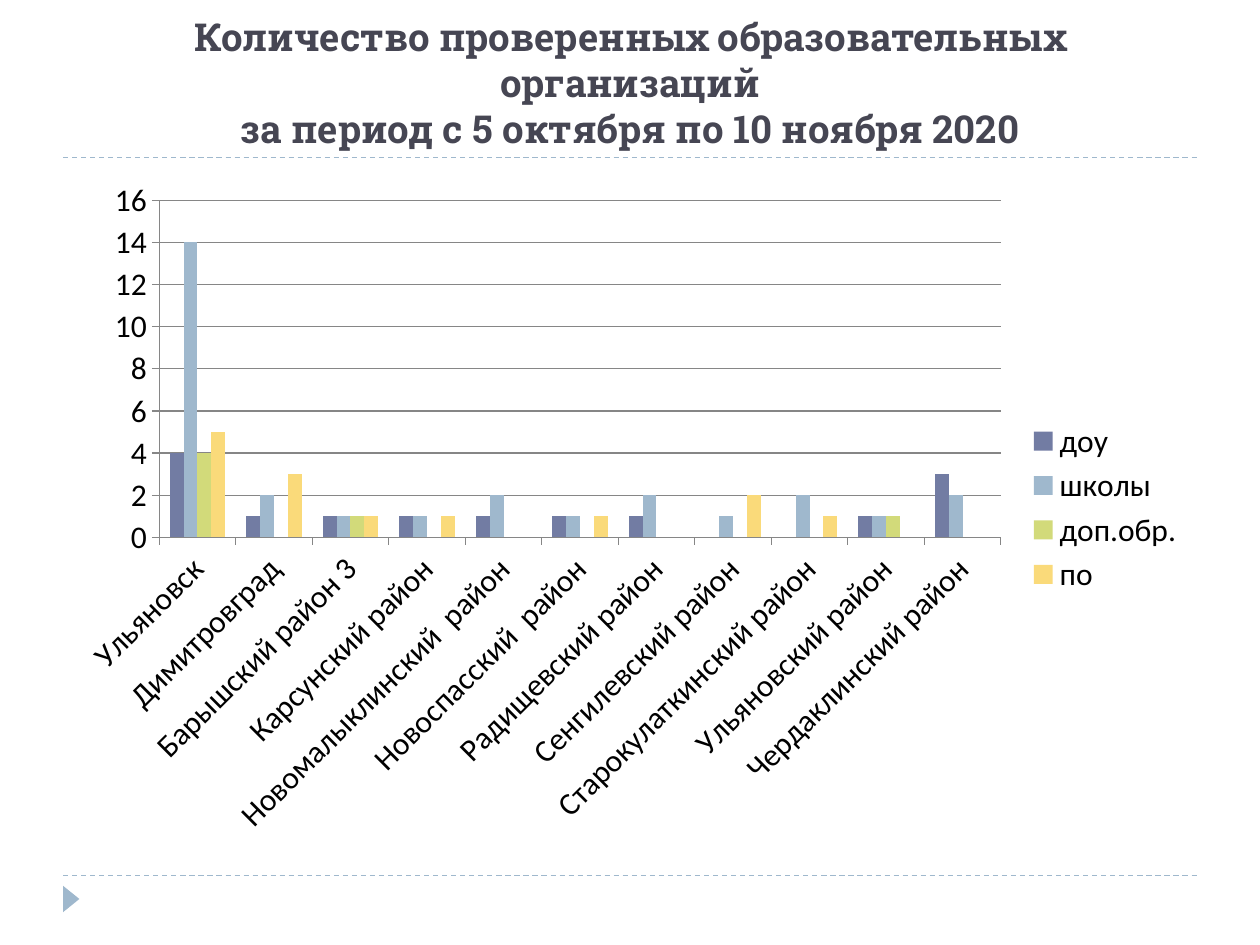
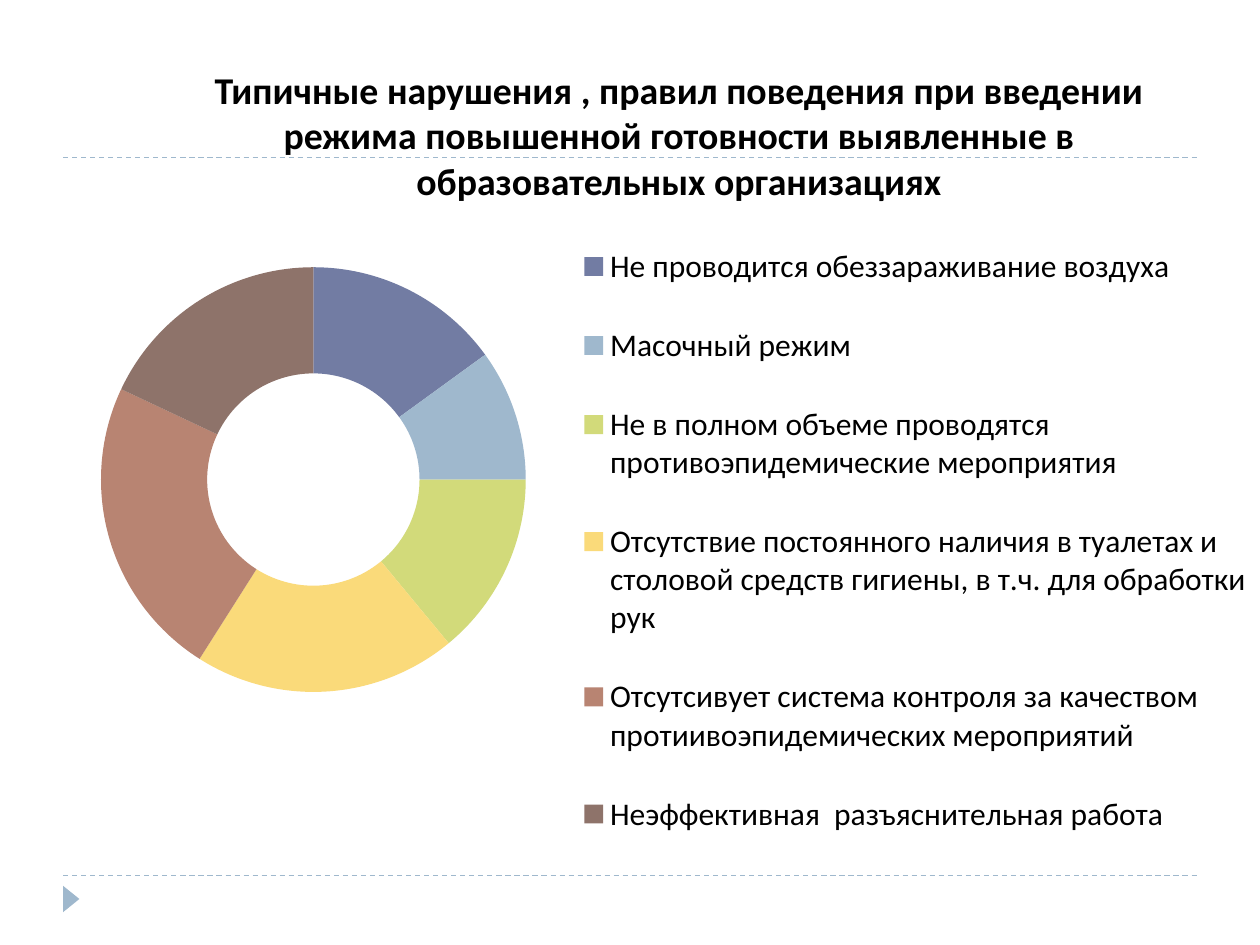
"""Build two slides on school inspections: a column chart and a doughnut chart."""
from lxml.etree import SubElement
from pptx import Presentation
from pptx.chart.data import CategoryChartData
from pptx.dml.color import RGBColor
from pptx.enum.chart import XL_CHART_TYPE, XL_LEGEND_POSITION, XL_TICK_MARK
from pptx.enum.dml import MSO_LINE
from pptx.enum.shapes import MSO_CONNECTOR, MSO_SHAPE
from pptx.enum.text import MSO_ANCHOR, PP_ALIGN
from pptx.oxml import parse_xml
from pptx.oxml.ns import nsdecls, qn
from pptx.util import Inches, Pt

INK, TITLE_INK, AXIS, ACCENT = "000000", "464653", "868686", "9FB8CD"
PALETTE = ["727CA3", ACCENT, "D2DA7A", "FADA7A", "B88472", "8E736A"]
BODY_FONT, TITLE_FONT = "Calibri", "Roboto Slab"
MARGIN, CONTENT_WIDTH = Inches(0.5), Inches(9)
HEADER_RULE, FOOTER_RULE = Inches(1.25), Inches(6.95)


def color(hex_text):
    return RGBColor.from_string(hex_text)


def place(element, left, top, width, height, target=""):
    """Position a chart part by shares of the chart's size."""
    layout = parse_xml(
        f'<c:layout {nsdecls("c")}><c:manualLayout>{target}'
        f'<c:xMode val="edge"/><c:yMode val="edge"/><c:x val="{left}"/><c:y val="{top}"/>'
        f'<c:w val="{width}"/><c:h val="{height}"/></c:manualLayout></c:layout>')
    for old in element.findall(qn("c:layout")):
        element.remove(old)
    element.insert(len(element.findall(qn("c:legendPos"))), layout)


presentation = Presentation()
presentation.slide_width, presentation.slide_height = Inches(10), Inches(7.5)
slides = [presentation.slides.add_slide(presentation.slide_layouts[6]) for _ in range(2)]
inspections_slide, violations_slide = slides

for slide in slides:
    for rule_top in (FOOTER_RULE, HEADER_RULE):
        rule = slide.shapes.add_connector(
            MSO_CONNECTOR.STRAIGHT, MARGIN, rule_top, MARGIN + CONTENT_WIDTH, rule_top)
        rule.line.color.rgb = color(ACCENT)
        rule.line.width = Pt(0.75)
        rule.line.dash_style = MSO_LINE.DASH
        SubElement(rule._element.spPr, qn("a:effectLst"))
    marker = slide.shapes.add_shape(
        MSO_SHAPE.ISOSCELES_TRIANGLE, Inches(0.46), Inches(7.07), Inches(0.21), Inches(0.13))
    marker.rotation = 90
    marker.shadow.inherit = False
    marker.fill.solid()
    marker.fill.fore_color.rgb = color(ACCENT)
    marker.line.fill.background()

inspections = CategoryChartData()
inspections.categories = [
    "Ульяновск", "Димитровград", "Барышский район 3", "Карсунский район",
    "Новомалыклинский  район", "Новоспасский  район", "Радищевский район",
    "Сенгилевский район", "Старокулаткинский район", "Ульяновский район",
    "Чердаклинский район"]
inspections.add_series("доу", [4, 1, 1, 1, 1, 1, 1, None, None, 1, 3])
inspections.add_series("школы", [14, 2, 1, 1, 2, 1, 2, 1, 2, 1, 2])
inspections.add_series("доп.обр.", [4, None, 1] + [None] * 6 + [1, None])
inspections.add_series("по", [5, 3, 1, 1, None, 1, None, 2, 1, None, None])
column_chart = inspections_slide.shapes.add_chart(
    XL_CHART_TYPE.COLUMN_CLUSTERED, MARGIN, Inches(1.33), CONTENT_WIDTH, Inches(5.4),
    inspections).chart

violations = CategoryChartData()
violations.categories = [
    "Не проводится обеззараживание воздуха",
    "Масочный режим",
    "Не в полном объеме проводятся противоэпидемические мероприятия",
    "Отсутствие постоянного наличия в туалетах и столовой средств гигиены, "
    "в т.ч. для обработки рук",
    "Отсутсивует система контроля за качеством протиивоэпидемических мероприятий",
    "Неэффективная  разъяснительная работа"]
violations.add_series("Series 1", [15, 10, 14, 20, 23, 18])
doughnut_chart = violations_slide.shapes.add_chart(
    XL_CHART_TYPE.DOUGHNUT, Inches(0.55), Inches(0.47), Inches(9.45), Inches(6.88),
    violations).chart

for chart in (column_chart, doughnut_chart):
    chart.has_title = False
    chart.font.name, chart.font.size = BODY_FONT, Pt(18)
    chart.font.color.rgb = color(INK)
    chart.has_legend = True
    chart.legend.position = XL_LEGEND_POSITION.RIGHT
    chart.legend.include_in_layout = False

columns = column_chart.plots[0]
columns.gap_width, columns.overlap, columns.vary_by_categories = 150, 0, False
for series, fill in zip(columns.series, PALETTE):
    series.format.fill.solid()
    series.format.fill.fore_color.rgb = color(fill)
for axis in (column_chart.category_axis, column_chart.value_axis):
    axis.major_tick_mark = XL_TICK_MARK.OUTSIDE
    axis.format.line.color.rgb = color(AXIS)
    axis.tick_labels.font.size = Pt(18)
column_chart.category_axis._element.find(qn("c:txPr")).find(qn("a:bodyPr")).set("rot", "-2700000")
value_axis = column_chart.value_axis
value_axis.minimum_scale, value_axis.maximum_scale, value_axis.major_unit = 0, 16, 2
value_axis.major_gridlines.format.line.color.rgb = color(AXIS)

ring = doughnut_chart.plots[0]
ring._element.find(qn("c:holeSize")).set("val", "50")
for number, fill in enumerate(PALETTE):
    point = ring.series[0].points[number]
    point.format.fill.solid()
    point.format.fill.fore_color.rgb = color(fill)
    point.format.line.fill.background()
place(doughnut_chart._chartSpace.chart.plotArea, 0.02, 0.24, 0.37, 0.49,
      '<c:layoutTarget val="inner"/>')
place(doughnut_chart.legend._element, 0.43, 0.17, 0.57, 0.77)

titles = [
    (inspections_slide, (0.5, 0.17, 9, 1.08), MSO_ANCHOR.BOTTOM, TITLE_FONT, 22, TITLE_INK,
     ["Количество проверенных образовательных организаций",
      "за период с 5 октября по 10 ноября 2020"]),
    (violations_slide, (1.54, 0.48, 7.7, 1.22), MSO_ANCHOR.TOP, BODY_FONT, 21.6, INK,
     ["Типичные нарушения , правил поведения при введении режима повышенной "
      "готовности выявленные в образовательных организациях"]),
]
for slide, box, anchor, font_name, size, ink, lines in titles:
    title = slide.shapes.add_textbox(*map(Inches, box))
    title.text_frame.word_wrap = True
    title.text_frame.vertical_anchor = anchor
    paragraph = title.text_frame.paragraphs[0]
    paragraph.alignment = PP_ALIGN.CENTER
    for number, line in enumerate(lines):
        if number:
            paragraph.add_line_break()
        run = paragraph.add_run()
        run.text = line
        run.font.name, run.font.size, run.font.bold = font_name, Pt(size), True
        run.font.color.rgb = color(ink)

presentation.save("out.pptx")
